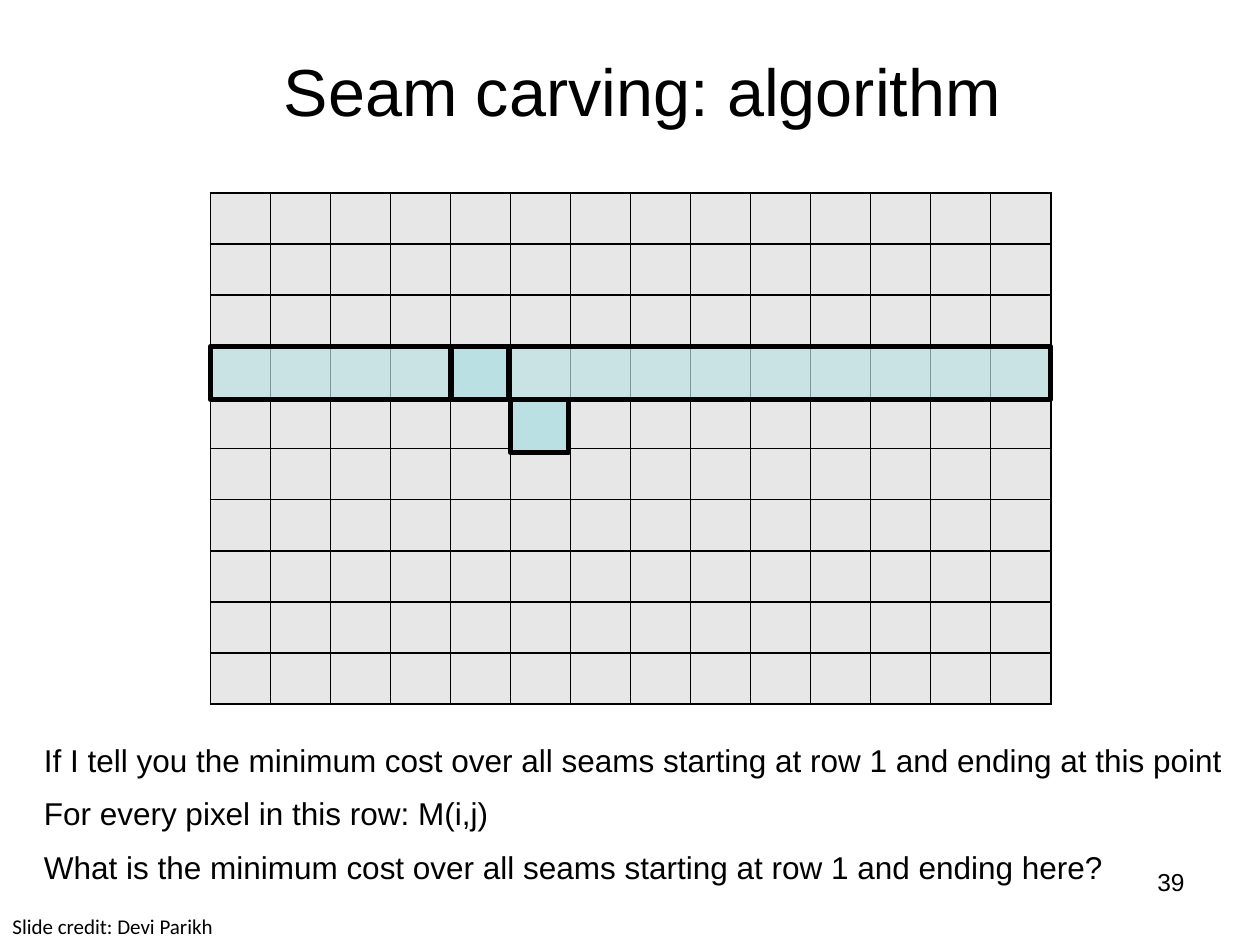
from dataclasses import dataclass

from lxml import etree
from pptx import Presentation
from pptx.dml.color import RGBColor
from pptx.enum.shapes import MSO_SHAPE
from pptx.enum.text import MSO_ANCHOR, PP_ALIGN
from pptx.oxml.ns import qn
from pptx.util import Inches, Pt

RECTANGLE = MSO_SHAPE.RECTANGLE
LEFT, CENTER, RIGHT = PP_ALIGN.LEFT, PP_ALIGN.CENTER, PP_ALIGN.RIGHT
TOP, MIDDLE = MSO_ANCHOR.TOP, MSO_ANCHOR.MIDDLE

BLACK = "000000"
GRID_FILL = "E7E7E7"
HIGHLIGHT = "BBE0E3"

ROWS, COLUMNS = 10, 14


@dataclass
class Box:
    left: float
    top: float
    width: float
    height: float

    def lengths(self) -> tuple:
        return tuple(Inches(v) for v in (self.left, self.top, self.width, self.height))


@dataclass
class Highlight:
    box: Box
    opacity: int = 100


GRID = Box(1.67, 1.53, 6.67, 4.06)
HIGHLIGHTS = [
    Highlight(Box(GRID.left, 2.75, GRID.width, 0.42), opacity=67),
    Highlight(Box(3.58, 2.75, 0.46, 0.42)),
    Highlight(Box(4.05, 3.17, 0.46, 0.42)),
]
STATEMENTS = [
    "If I tell you the minimum cost over all seams starting at row 1 and ending at this point",
    "For every pixel in this row: M(i,j)",
    "What is the minimum cost over all seams starting at row 1 and ending here?",
]


def set_fill(fill, color: str) -> None:
    fill.solid()
    fill.fore_color.rgb = RGBColor.from_string(color)


def add_text(slide, text: str, box: Box, *, size: float, font: str = "Arial",
             align=LEFT, anchor=TOP) -> None:
    frame = slide.shapes.add_textbox(*box.lengths()).text_frame
    frame.word_wrap = True
    frame.vertical_anchor = anchor
    paragraph = frame.paragraphs[0]
    paragraph.alignment = align
    run = paragraph.add_run()
    run.text = text
    run.font.name = font
    run.font.size = Pt(size)
    run.font.color.rgb = RGBColor.from_string(BLACK)


def add_cell_borders(cell, color: str, width: float) -> None:
    properties = cell._tc.get_or_add_tcPr()
    for position, side in enumerate(("a:lnL", "a:lnR", "a:lnT", "a:lnB")):
        line = etree.Element(qn(side), w=str(Pt(width)))
        solid = etree.SubElement(line, qn("a:solidFill"))
        etree.SubElement(solid, qn("a:srgbClr"), val=color)
        properties.insert(position, line)


def add_pixel_grid(slide, box: Box) -> None:
    table = slide.shapes.add_table(ROWS, COLUMNS, *box.lengths()).table
    table.first_row = False
    table.horz_banding = False
    for column in table.columns:
        column.width = Inches(box.width / COLUMNS)
    for row in table.rows:
        row.height = Inches(box.height / ROWS)
    for cell in table.iter_cells():
        cell.margin_top = cell.margin_bottom = 0
        set_fill(cell.fill, GRID_FILL)
        add_cell_borders(cell, BLACK, 1)


def add_highlight(slide, highlight: Highlight) -> None:
    shape = slide.shapes.add_shape(RECTANGLE, *highlight.box.lengths())
    shape.shadow.inherit = False
    set_fill(shape.fill, HIGHLIGHT)
    set_fill(shape.line.fill, BLACK)
    shape.line.width = Pt(3)
    if highlight.opacity < 100:
        color = shape._element.spPr.find(qn("a:solidFill")).find(qn("a:srgbClr"))
        etree.SubElement(color, qn("a:alpha"), val=str(highlight.opacity * 1000))


def main() -> None:
    presentation = Presentation()
    presentation.slide_width = Inches(10)
    presentation.slide_height = Inches(7.5)
    slide = presentation.slides.add_slide(presentation.slide_layouts[6])

    # Title, slide number and credit
    add_text(slide, "Seam carving: algorithm", Box(0.67, 0.09, 8.86, 1.25),
             size=38, align=CENTER, anchor=MIDDLE)
    add_text(slide, "39", Box(7.17, 6.83, 2.33, 0.52), size=14, align=RIGHT)
    add_text(slide, "Slide credit: Devi Parikh", Box(0, 7.2, 2.75, 0.3),
             size=12, font="Calibri")

    # Pixel grid
    add_pixel_grid(slide, GRID)

    # Explanation below the grid
    for index, statement in enumerate(STATEMENTS):
        add_text(slide, statement, Box(0.25, 5.83 + 0.425 * index, 9.75, 0.4), size=18)

    # Known row, known pixel and the pixel in question
    for highlight in HIGHLIGHTS:
        add_highlight(slide, highlight)

    presentation.save("out.pptx")


if __name__ == "__main__":
    main()
